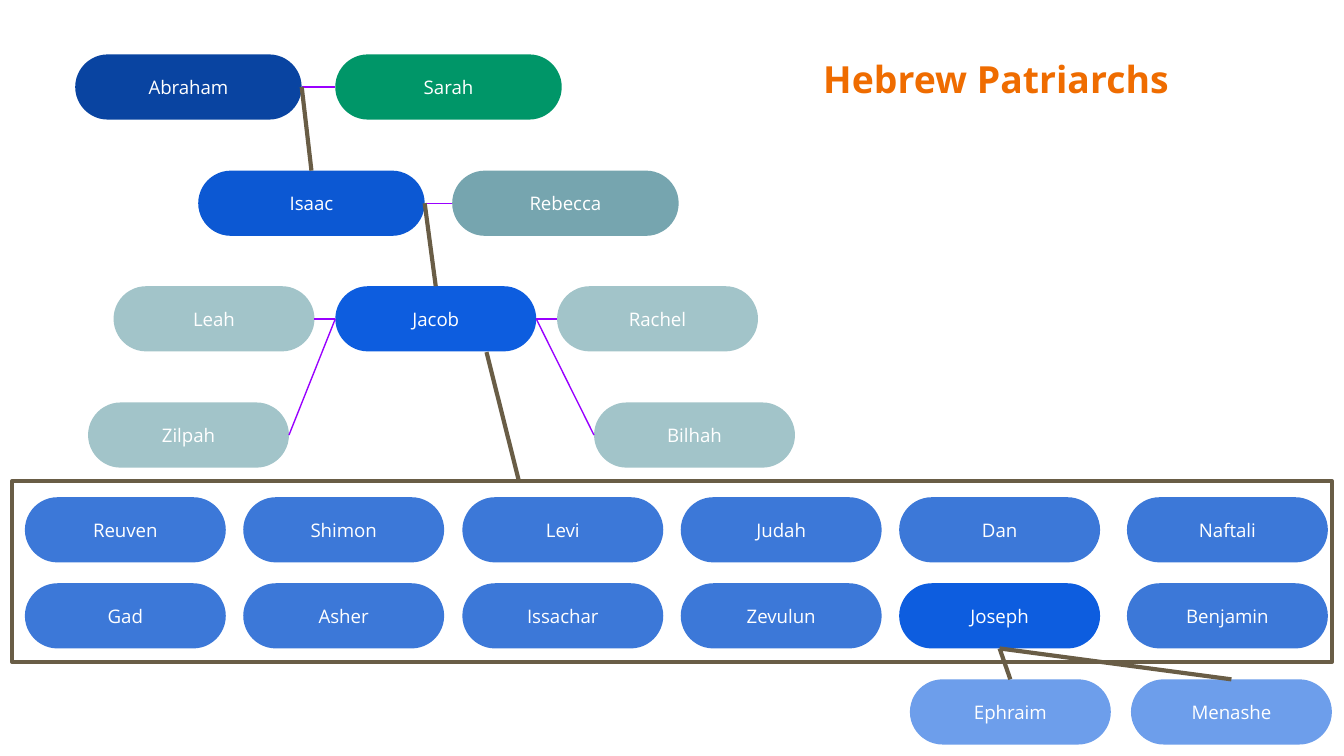
from dataclasses import dataclass

from pptx import Presentation
from pptx.dml.color import RGBColor
from pptx.enum.shapes import MSO_CONNECTOR as Conn, MSO_SHAPE as Kind
from pptx.enum.text import MSO_ANCHOR as Anchor, MSO_AUTO_SIZE as Fit, PP_ALIGN as Align
from pptx.oxml.ns import qn
from pptx.shapes.autoshape import Shape
from pptx.shapes.connector import Connector
from pptx.slide import Slide
from pptx.text.text import TextFrame
from pptx.util import Pt
from lxml.etree import SubElement

SCALE = 4572  # EMU per px, 200 px to the inch
FONT = "Open Sans"
WHITE, BROWN, PURPLE = "FFFFFF", "695D46", "9900FF"
TEAL, BLUE, ROYAL, SKY = "A2C4C9", "3C78D8", "0D5DDF", "6D9EEB"
TOP, LEFT, BOTTOM, RIGHT = range(4)
WIDE, SLIM, TALL = 337, 299, 97
THIN, THICK = 0.75, 2.25


@dataclass(frozen=True)
class Person:
    name: str
    x: int
    y: int
    fill: str
    width: int = SLIM


@dataclass(frozen=True)
class Link:
    start: str
    out: int
    end: str
    into: int
    color: str = PURPLE
    weight: float = THIN


FAMILY = [
    Person("Abraham", 112, 81, "0944A1", WIDE),
    Person("Sarah", 499, 81, "009668", WIDE),
    Person("Isaac", 295, 254, "0C58D3", WIDE),
    Person("Rebecca", 673, 254, "76A5AF", WIDE),
    Person("Leah", 169, 426, TEAL),
    Person("Jacob", 499, 426, ROYAL),
    Person("Rachel", 829, 426, TEAL),
    Person("Zilpah", 131, 599, TEAL),
    Person("Bilhah", 884, 599, TEAL),
    Person("Ephraim", 1354, 1011, SKY),
    Person("Menashe", 1683, 1011, SKY),
]
COLUMNS = (37, 362, 688, 1013, 1338, 1677)
SONS = {
    740: ("Reuven", "Shimon", "Levi", "Judah", "Dan", "Naftali"),
    868: ("Gad", "Asher", "Issachar", "Zevulun", "Joseph", "Benjamin"),
}
LINKS = [
    Link("Abraham", RIGHT, "Sarah", LEFT),
    Link("Isaac", RIGHT, "Rebecca", LEFT),
    Link("Leah", RIGHT, "Jacob", LEFT),
    Link("Jacob", RIGHT, "Rachel", LEFT),
    Link("Jacob", LEFT, "Zilpah", RIGHT),
    Link("Jacob", RIGHT, "Bilhah", LEFT),
    Link("Abraham", RIGHT, "Isaac", TOP, BROWN, THICK),
    Link("Isaac", RIGHT, "Jacob", TOP, BROWN, THICK),
    Link("Joseph", BOTTOM, "Ephraim", TOP, BROWN, THICK),
    Link("Joseph", BOTTOM, "Menashe", TOP, BROWN, THICK),
]


def px(*sizes: int) -> list[int]:
    return [size * SCALE for size in sizes]


def paint(target, color: str) -> None:
    """Give a fill a solid colour."""
    target.solid()
    target.fore_color.rgb = RGBColor.from_string(color)


def write(frame: TextFrame, text: str, size: int, color: str,
          align: Align, anchor: Anchor, bold: bool = False) -> None:
    frame.text = text
    frame.word_wrap = True
    frame.auto_size = Fit.NONE
    frame.vertical_anchor = anchor
    frame.margin_left = frame.margin_right = px(20)[0]
    frame.margin_top = frame.margin_bottom = px(20)[0]
    para = frame.paragraphs[0]
    para.alignment = align
    font = para.runs[0].font
    font.name, font.size, font.bold = FONT, Pt(size), bold
    paint(font.fill, color)


def add_frame(slide: Slide) -> None:
    """Draw the box around the twelve sons."""
    box = slide.shapes.add_shape(Kind.RECTANGLE, *px(18, 716, 1964, 269))
    box.shadow.inherit = False
    paint(box.fill, WHITE)
    paint(box.line.fill, BROWN)
    box.line.width = Pt(THICK)


def add_pill(slide: Slide, person: Person) -> Shape:
    place = px(person.x, person.y, person.width, TALL)
    pill = slide.shapes.add_shape(Kind.ROUNDED_RECTANGLE, *place)
    pill.adjustments[0] = 0.5
    pill.shadow.inherit = False
    paint(pill.fill, person.fill)
    pill.line.fill.background()
    write(pill.text_frame, person.name, 10, WHITE, Align.CENTER, Anchor.MIDDLE)
    return pill


def add_line(slide: Slide, color: str, weight: float,
             ends: tuple[int, int, int, int] = (0, 0, 0, 0)) -> Connector:
    line = slide.shapes.add_connector(Conn.STRAIGHT, *px(*ends))
    paint(line.line.fill, color)
    line.line.width = Pt(weight)
    SubElement(line._element.spPr, qn("a:effectLst"))
    return line


def add_link(slide: Slide, link: Link, pills: dict[str, Shape]) -> None:
    line = add_line(slide, link.color, link.weight)
    line.begin_connect(pills[link.start], link.out)
    line.end_connect(pills[link.end], link.into)


def add_title(slide: Slide) -> None:
    title = slide.shapes.title
    title.left, title.top, title.width, title.height = px(1205, 64, 656, 114)
    write(title.text_frame, "Hebrew Patriarchs", 20, "EF6C00",
          Align.LEFT, Anchor.TOP, bold=True)


def main() -> None:
    deck = Presentation()
    deck.slide_width, deck.slide_height = px(2000, 1125)
    slide = deck.slides.add_slide(deck.slide_layouts[5])
    add_title(slide)
    add_frame(slide)
    sons = [
        Person(name, x, y, ROYAL if name == "Joseph" else BLUE)
        for y, names in SONS.items()
        for x, name in zip(COLUMNS, names)
    ]
    pills = {person.name: add_pill(slide, person) for person in FAMILY + sons}
    for link in LINKS:
        add_link(slide, link, pills)
    add_line(slide, BROWN, THICK, (724, 524, 772, 715))
    deck.save("out.pptx")


if __name__ == "__main__":
    main()
